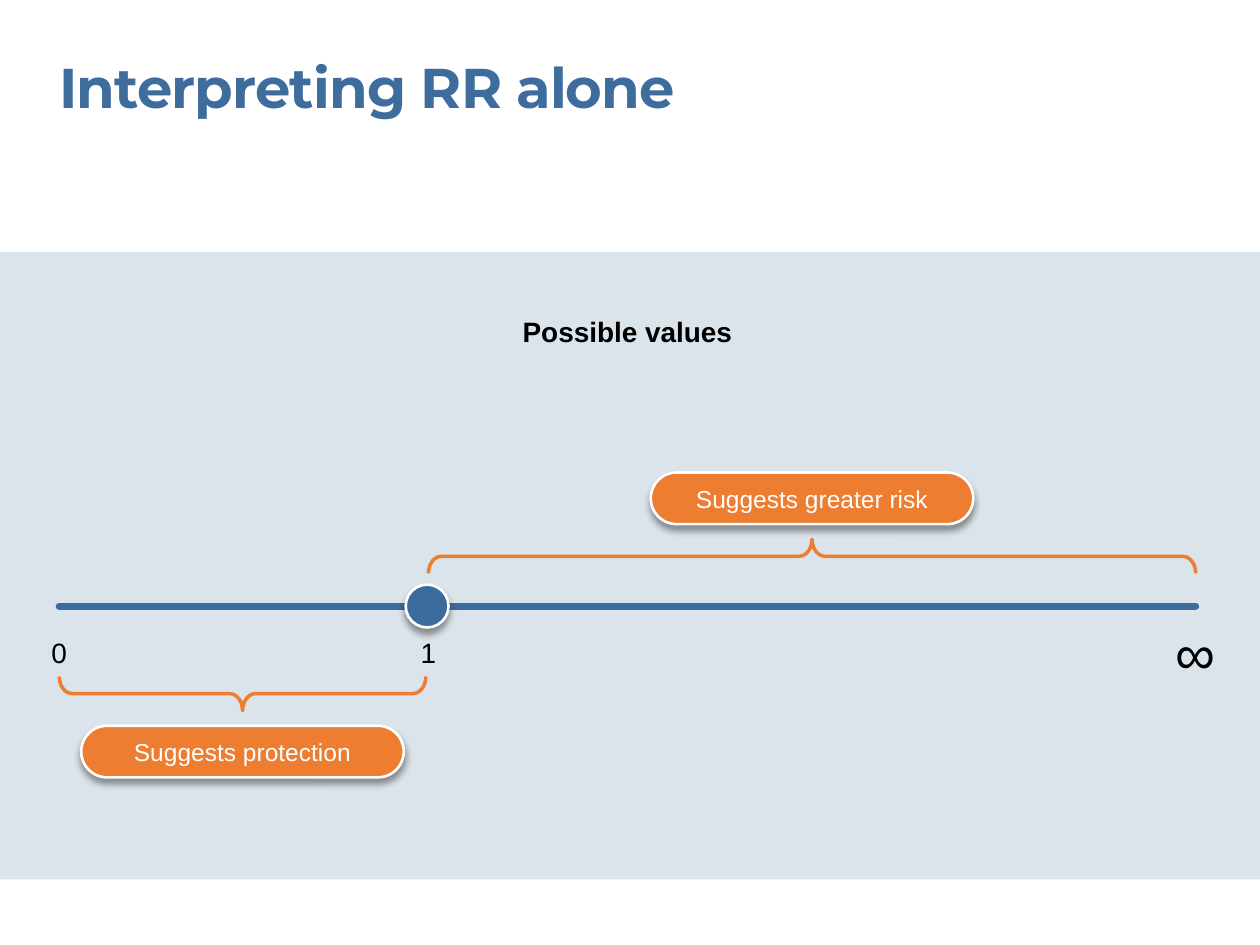
from lxml.etree import SubElement
from pptx import Presentation
from pptx.dml.color import RGBColor
from pptx.enum.shapes import MSO_CONNECTOR, MSO_SHAPE
from pptx.enum.text import MSO_ANCHOR, MSO_AUTO_SIZE, PP_ALIGN
from pptx.oxml.ns import qn
from pptx.util import Inches, Pt

# Content
TITLE = "Interpreting RR alone"
HEADING = "Possible values"
TICKS = [("0", 0.47, 5.04, 16), ("1", 3.4, 5.04, 16), ("∞", 9.49, 4.91, 32)]
# label, range start, range end, brace top, pill top, brace rotation
RANGES = [
    ("Suggests protection", 0.47, 3.38, 5.37, 5.76, 90),
    ("Suggests greater risk", 3.4, 9.49, 4.28, 3.75, 270),
]
COLORS = {"title": "3D6C9D", "axis": "3C6C9D", "band": "DBE4EA", "brace": "ED7D30",
          "pill": "ED7D31", "white": "FFFFFF", "black": "000000"}

# Geometry in inches
WIDTH, HEIGHT = 10, 7.5
AXIS_START, AXIS_END, AXIS_Y = 0.47, 9.49, 4.81
DOT_X, DOT_SIZE = 3.39, 0.34
TICK_WIDTH = 0.36
BRACE_DEPTH = 0.27
PILL_WIDTH, PILL_HEIGHT = 2.56, 0.41


def rgb(name):
    return RGBColor.from_string(COLORS[name])


def write(part, text, size, color="black", font="Arial", bold=False,
          align=PP_ALIGN.CENTER, anchor=MSO_ANCHOR.TOP, insets=(0, 0),
          fit=MSO_AUTO_SIZE.SHAPE_TO_FIT_TEXT, spacing=None):
    frame = part.text_frame
    frame.word_wrap = True
    frame.auto_size = fit
    frame.vertical_anchor = anchor
    frame.margin_left = frame.margin_right = Inches(insets[0])
    frame.margin_top = frame.margin_bottom = Inches(insets[1])
    paragraph = frame.paragraphs[0]
    paragraph.alignment = align
    run = paragraph.add_run()
    run.text = text
    run.font.size, run.font.bold, run.font.name = Pt(size), bold, font
    run.font.color.rgb = rgb(color)
    if spacing is not None:
        run._r.get_or_add_rPr().set("spc", str(int(spacing * 100)))


def add_text(left, top, width, height, text, size, **style):
    box = slide.shapes.add_textbox(*map(Inches, (left, top, width, height)))
    write(box, text, size, **style)


def add_part(kind, left, top, width, height, fill=None, line=None, weight=1.5):
    part = slide.shapes.add_shape(kind, *map(Inches, (left, top, width, height)))
    part.shadow.inherit = False
    if fill:
        part.fill.solid()
        part.fill.fore_color.rgb = rgb(fill)
    else:
        part.fill.background()
    if line:
        part.line.color.rgb = rgb(line)
        part.line.width = Pt(weight)
    else:
        part.line.fill.background()
    return part


def drop_shadow(part):
    effects = part._element.spPr.find(qn("a:effectLst"))
    shadow = SubElement(effects, qn("a:outerShdw"), blurRad=str(Pt(4)),
                        dist=str(Pt(3)), dir="5400000", algn="t", rotWithShape="0")
    tone = SubElement(shadow, qn("a:srgbClr"), val=COLORS["black"])
    SubElement(tone, qn("a:alpha"), val="40000")


deck = Presentation()
deck.slide_width, deck.slide_height = Inches(WIDTH), Inches(HEIGHT)
slide = deck.slides.add_slide(deck.slide_layouts[5])

# Title and background band
title = slide.shapes.title
title.left, title.top, title.width, title.height = map(Inches, (0.47, 0.42, 9.02, 0.54))
write(title, TITLE, 32, color="title", font="Montserrat", bold=True,
      align=PP_ALIGN.LEFT, spacing=-0.5)
add_part(MSO_SHAPE.RECTANGLE, 0, 2, WIDTH, 4.98, fill="band")
add_text(0.48, 2.5, 9, 0.27, HEADING, 16, bold=True)

# Axis with its neutral point
axis = slide.shapes.add_connector(
    MSO_CONNECTOR.STRAIGHT, *map(Inches, (AXIS_START, AXIS_Y, AXIS_END, AXIS_Y)))
axis.line.color.rgb = rgb("axis")
axis.line.width = Pt(4)
axis.line._get_or_add_ln().set("cap", "rnd")
SubElement(axis._element.spPr, qn("a:effectLst"))
neutral_point = add_part(MSO_SHAPE.OVAL, DOT_X - DOT_SIZE / 2, AXIS_Y - DOT_SIZE / 2,
                         DOT_SIZE, DOT_SIZE, fill="axis", line="white")
drop_shadow(neutral_point)

for label, center, top, size in TICKS:
    add_text(center - TICK_WIDTH / 2, top, TICK_WIDTH, size / 60, label, size)

# Braces and pills, centred on their ranges
for label, start, end, brace_top, pill_top, rotation in RANGES:
    center, span = (start + end) / 2, end - start
    brace = add_part(MSO_SHAPE.RIGHT_BRACE, center - BRACE_DEPTH / 2,
                     brace_top + (BRACE_DEPTH - span) / 2, BRACE_DEPTH, span,
                     line="brace", weight=2)
    brace.adjustments[0] = 0.38
    brace.rotation = rotation
    pill = add_part(MSO_SHAPE.ROUNDED_RECTANGLE, center - PILL_WIDTH / 2, pill_top,
                    PILL_WIDTH, PILL_HEIGHT, fill="pill", line="white")
    pill.adjustments[0] = 0.5
    drop_shadow(pill)
    write(pill, label, 14, color="white", anchor=MSO_ANCHOR.MIDDLE,
          insets=(0.2, 0.12), fit=MSO_AUTO_SIZE.NONE)

deck.save("out.pptx")
